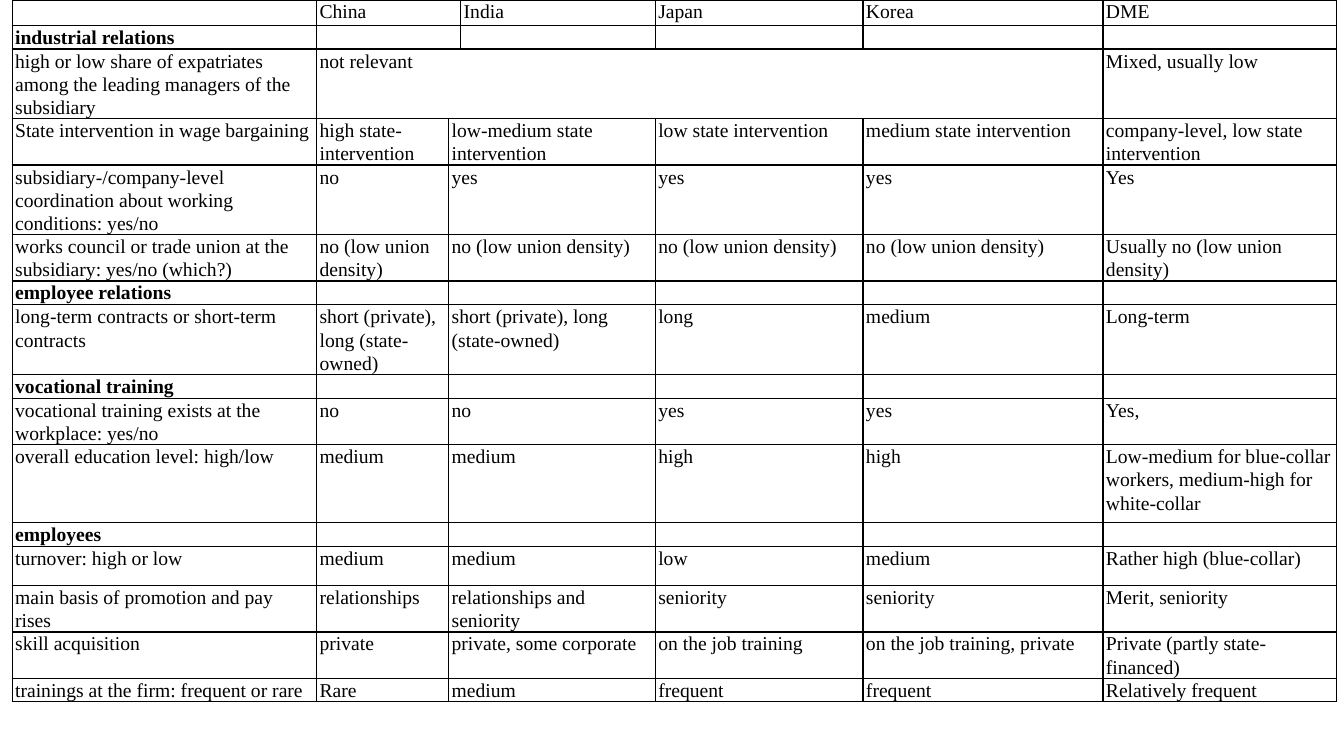
"""Build a slide with a table comparing labour relations across Asia and DME."""
import pptx
import pptx.dml.color
import pptx.oxml
import pptx.oxml.ns
import pptx.util

Inches, Pt = pptx.util.Inches, pptx.util.Pt
COLORS = {"ink": "000000"}
FONT = "Times New Roman"
TEXT_SIZE = Pt(14)
COLUMN_WIDTHS = [3.02, 1.31, 0.12, 1.93, 2.06, 2.38, 2.32]
DENSITY = "no (low union density)"
CONTRACTS = "short (private), long (state-owned)"
ROWS = [
    (0.25, ["", "China", "India", "Japan", "Korea", "DME"]),
    (0.19, ["industrial relations"]),
    (0.58, ["high or low share of expatriates among the leading managers of the subsidiary",
            "not relevant", "Mixed, usually low"]),
    (0.39, ["State intervention in wage bargaining", "high state- intervention",
            "low-medium state intervention", "low state intervention",
            "medium state intervention", "company-level, low state intervention"]),
    (0.58, ["subsidiary-/company-level coordination about working conditions: yes/no",
            "no", "yes", "yes", "yes", "Yes"]),
    (0.45, ["works council or trade union at the subsidiary: yes/no (which?)",
            DENSITY, DENSITY, DENSITY, DENSITY, "Usually no (low union density)"]),
    (0.19, ["employee relations"]),
    (0.58, ["long-term contracts or short-term contracts",
            CONTRACTS, CONTRACTS, "long", "medium", "Long-term"]),
    (0.19, ["vocational training"]),
    (0.39, ["vocational training exists at the workplace: yes/no",
            "no", "no", "yes", "yes", "Yes,"]),
    (0.77, ["overall education level: high/low", "medium", "medium", "high", "high",
            "Low-medium for blue-collar workers, medium-high for white-collar"]),
    (0.19, ["employees"]),
    (0.39, ["turnover: high or low", "medium", "medium", "low", "medium",
            "Rather high (blue-collar)"]),
    (0.39, ["main basis of promotion and pay rises", "relationships",
            "relationships and seniority", "seniority", "seniority", "Merit, seniority"]),
    (0.39, ["skill acquisition", "private", "private, some corporate", "on the job training",
            "on the job training, private", "Private (partly state-financed)"]),
    (0.22, ["trainings at the firm: frequent or rare", "Rare", "medium",
            "frequent", "frequent", "Relatively frequent"]),
]
MERGES = {0: (1, 2), 1: (1, 2), 2: (1, 5)}


def style_cell(cell):
    """Give a cell thin black borders, narrow margins and no fill."""
    properties = cell._tc.get_or_add_tcPr()
    for side in "LRTB":
        properties.append(pptx.oxml.parse_xml(
            f'<a:ln{side} {pptx.oxml.ns.nsdecls("a")} w="{Pt(1)}"><a:solidFill>'
            f'<a:srgbClr val="{COLORS["ink"]}"/></a:solidFill></a:ln{side}>'))
    cell.fill.background()
    cell.margin_left = cell.margin_right = Inches(0.03)
    cell.margin_top = cell.margin_bottom = 0


def write_cell(cell, text, bold):
    """Write one run, or size the empty paragraph."""
    para = cell.text_frame.paragraphs[0]
    para.line_spacing = 1.07
    if not text:
        para._p.get_or_add_endParaRPr().set("sz", str(int(TEXT_SIZE.pt * 100)))
        return
    span = para.add_run()
    span.text = text
    span.font.name = FONT
    span.font.size = TEXT_SIZE
    span.font.bold = bold
    span.font.color.rgb = pptx.dml.color.RGBColor.from_string(COLORS["ink"])


deck = pptx.Presentation()
deck.slide_width, deck.slide_height = Inches(13.33), Inches(7.5)
page = deck.slides.add_slide(deck.slide_layouts[6])

table = page.shapes.add_table(len(ROWS), len(COLUMN_WIDTHS), Inches(0.12), 0,
                              Inches(13.15), Inches(7.4)).table
table.first_row = table.horz_banding = False
for column, width in zip(table.columns, COLUMN_WIDTHS):
    column.width = Inches(width)

for row_index, (height, texts) in enumerate(ROWS):
    table.rows[row_index].height = Inches(height)
    first, last = MERGES.get(row_index, (2, 3))
    table.cell(row_index, first).merge(table.cell(row_index, last))
    is_heading = len(texts) == 1
    remaining = iter(texts)
    for column_index in range(len(COLUMN_WIDTHS)):
        cell = table.cell(row_index, column_index)
        style_cell(cell)
        text = "" if cell.is_spanned else next(remaining, "")
        write_cell(cell, text, is_heading)

deck.save("out.pptx")
